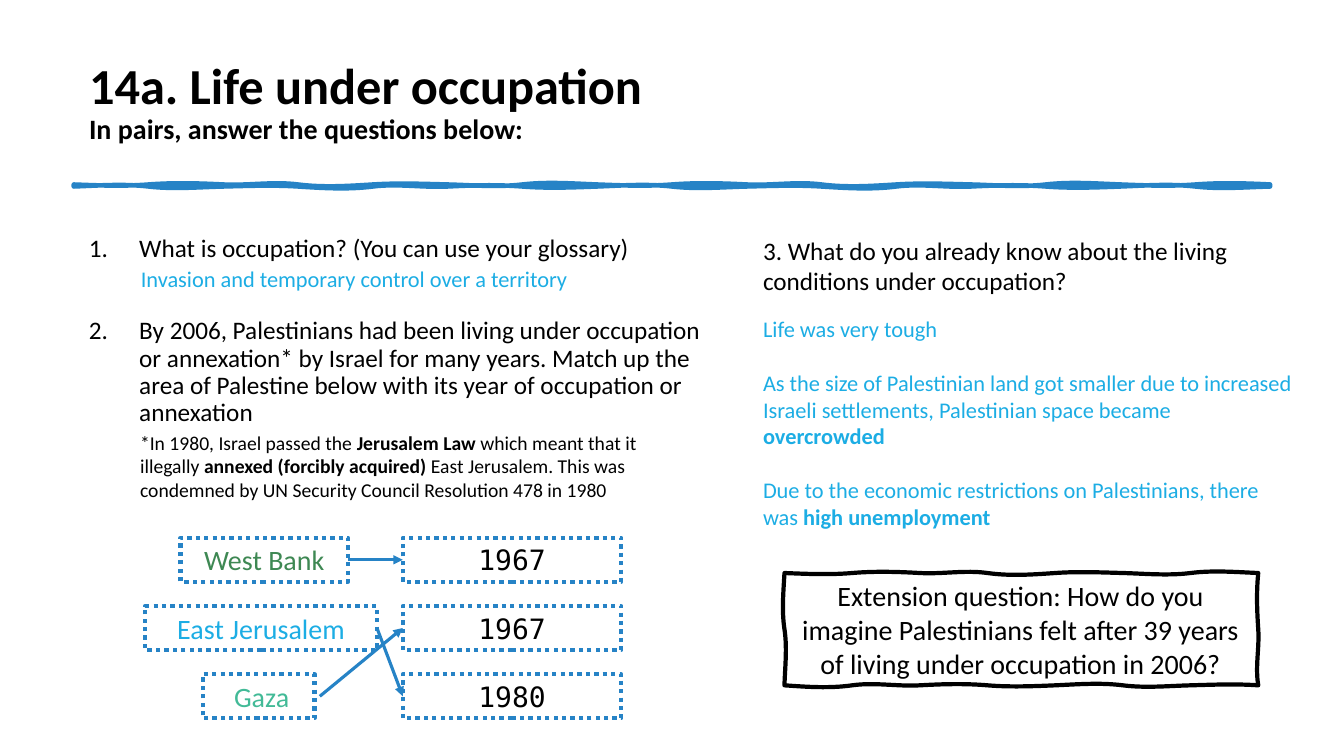
import itertools

import lxml.etree
import pptx
import pptx.dml.color
import pptx.enum.dml
import pptx.enum.shapes
import pptx.enum.text
import pptx.oxml.ns
import pptx.util

Cm, Pt = pptx.util.Cm, pptx.util.Pt
qn = pptx.oxml.ns.qn
ALIGN = pptx.enum.text.PP_ALIGN
ANCHOR = pptx.enum.text.MSO_ANCHOR
HUES = {"ink": "000000", "rule": "2683C6", "sky": "1CADE4",
        "leaf": "3E8853", "mint": "42BA97"}
SANS, MONO = "Calibri", "DejaVu Sans Mono"


def hue(name):
    return pptx.dml.color.RGBColor.from_string(HUES[name])


def add_run(para, text, size, tone="ink", face=SANS, bold=False):
    run = para.add_run()
    run.text = text
    for key, value in {"size": Pt(size), "name": face, "bold": bold}.items():
        setattr(run.font, key, value)
    run.font.color.rgb = hue(tone)


# Text: each paragraph is a list of plain strings and (bold,) tuples
def write(frame, paras, size, tone="ink", face=SANS, gap=0, **form):
    frame.word_wrap = True
    for i, parts in enumerate(paras):
        para = frame.paragraphs[0] if i == 0 else frame.add_paragraph()
        looks = {"alignment": ALIGN.LEFT, "space_before": Pt(gap if i else 0), **form}
        for key, value in looks.items():
            setattr(para, key, value)
        for part in parts:
            bold = isinstance(part, tuple)
            add_run(para, part[0] if bold else part, size, tone, face, bold)


def note(slide, box, paras, size, **form):
    frame = slide.shapes.add_textbox(*map(Cm, box)).text_frame
    write(frame, paras, size, **form)
    return frame


def style(shape, tone, width, fill=None):
    shape.shadow.inherit = False
    if fill:
        shape.fill.solid()
        shape.fill.fore_color.rgb = hue(fill)
    else:
        shape.fill.background()
    shape.line.color.rgb = hue(tone)
    shape.line.width = Pt(width)


# Hand-drawn outline: a rectangle whose long and short sides waver in curves
def sketch(slide, box, swing, spans, ends):
    left, top, wide, high = box
    bends = itertools.cycle((0.3, -0.6, 0.4, 1, -0.5, 0.2, -0.9))
    corners = [(left, top), (left + wide, top), (left + wide, top + high), (left, top + high)]
    dots = [corners[0]]
    for k, (x, y) in enumerate(corners):
        nx, ny = corners[(k + 1) % 4]
        count = ends if k % 2 else spans
        dx, dy = (nx - x) / count, (ny - y) / count
        reach = min(swing, high / 20) if k % 2 else swing
        bend = next(bends)
        for i in range(count):
            after = next(bends)
            for t, off in ((1 / 3, bend), (2 / 3, -after), (1, 0)):
                push = off * reach
                dots.append((x + dx * (i + t) + push * (k % 2),
                             y + dy * (i + t) + push * (1 - k % 2)))
            bend = after
    dots = [(Cm(x), Cm(y)) for x, y in dots]
    pen = slide.shapes.build_freeform(*dots[0])
    pen.add_line_segments(dots[1:], close=True)
    shape = pen.convert_to_shape()
    # Turn each three line steps into one curve
    steps = list(shape._element.iter(qn("a:lnTo")))
    for first, second, third in zip(steps[::3], steps[1::3], steps[2::3]):
        curve = lxml.etree.Element(qn("a:cubicBezTo"))
        first.addprevious(curve)
        for step in (first, second, third):
            curve.append(step[0])
            step.getparent().remove(step)
    return shape


# Heading with its wavy rule
def head(slide, box):
    left, top, wide, high = box
    title = slide.shapes.title
    for key, value in zip(("left", "top", "width", "height"), box):
        setattr(title, key, Cm(value))
    frame = title.text_frame
    frame.auto_size = pptx.enum.text.MSO_AUTO_SIZE.NONE
    frame.vertical_anchor = ANCHOR.MIDDLE
    write(frame, [[("14a. Life under occupation ",)]], 36, line_spacing=0.9)
    para = frame.paragraphs[0]
    para.add_line_break()
    lxml.etree.SubElement(para._p.find(qn("a:br")), qn("a:rPr"), sz="3600")
    add_run(para, "In pairs, answer the questions below:", 20, bold=True)
    rule = sketch(slide, (left - 0.13, top + high + 0.2, wide + 0.94, 0.05), 0.08, 16, 1)
    style(rule, "rule", 3.25, "rule")


# Numbered questions with answer and footnote
def quiz(slide, box):
    left, top, wide, high = box
    frame = note(slide, box, [
        ["What is occupation? (You can use your glossary)"],
        ["By 2006, Palestinians had been living under occupation or annexation* by Israel "
         "for many years. Match up the area of Palestine below with its year of "
         "occupation or annexation"]], 18, gap=39.5, line_spacing=0.9)
    for para in frame.paragraphs:
        props = para._p.get_or_add_pPr()
        props.set("marL", str(Cm(1.27)))
        props.set("indent", str(-Cm(1.27)))
        lxml.etree.SubElement(props, qn("a:buFont"), typeface="+mj-lt")
        lxml.etree.SubElement(props, qn("a:buAutoNum"), type="arabicPeriod")
    note(slide, (left + 1.31, top + 0.74, 14.6, 0.94),
         [["Invasion and temporary control over a territory"]], 16, tone="sky")
    note(slide, (left + 1.29, top + 4.92, 14.6, 2.06), [[
        "*In 1980, Israel passed the ", ("Jerusalem Law ",),
        "which meant that it illegally ", ("annexed (forcibly acquired) ",),
        "East Jerusalem. This was condemned by UN Security Council Resolution 478 in 1980"]], 14)


def card(slide, box, text, tone="ink", face=SANS, inset=0):
    kind = pptx.enum.shapes.MSO_SHAPE.RECTANGLE
    shape = slide.shapes.add_shape(kind, *map(Cm, box))
    style(shape, "rule", 3)
    shape.line.dash_style = pptx.enum.dml.MSO_LINE.ROUND_DOT
    frame = shape.text_frame
    frame.vertical_anchor = ANCHOR.MIDDLE
    frame.margin_left = Cm(0.25 + inset)
    write(frame, [[text]], 20, tone, face, alignment=ALIGN.CENTER)
    return shape


def arrow(slide, start, end, gap=0):
    y = start.top + start.height // 2
    x = start.left + start.width + Cm(gap)
    kind = pptx.enum.shapes.MSO_CONNECTOR.STRAIGHT
    link = slide.shapes.add_connector(kind, x, y, end.left, end.top + end.height // 2)
    if not gap:
        link.begin_connect(start, 3)
    link.end_connect(end, 1)
    link.line.color.rgb = hue("rule")
    link.line.width = Pt(2.25)
    props = link._element.spPr
    lxml.etree.SubElement(props.find(qn("a:ln")), qn("a:tailEnd"), type="triangle")
    lxml.etree.SubElement(props, qn("a:effectLst"))


# Places matched to years
def match(slide, box):
    left, top, wide, high = box
    tall = 1.11
    step = (high - tall) / 2
    rows = [("West Bank", "leaf", 0.89, 4.22, 0, "1967"),
            ("East Jerusalem", "sky", 0, 5.84, 0, "1967"),
            ("Gaza", "mint", 1.45, 2.82, 0.15, "1980")]
    spots, years = [], []
    for i, (place, tone, shift, span, inset, year) in enumerate(rows):
        y = top + i * step
        spots.append(card(slide, (left + shift, y, span, tall), place, tone, inset=inset))
        years.append(card(slide, (left + wide - 5.51, y, 5.51, tall), year, face=MONO))
    for start, end, gap in ((0, 0, 0), (1, 2, 0), (2, 1, 0.13)):
        arrow(slide, spots[start], years[end], gap)


# Third question, its answers and the extension
def talk(slide, box):
    left, top, wide, high = box
    note(slide, (left, top, 13.31, 5.21), [[
        "3. What do you already know about the living conditions under occupation?"]], 18)
    note(slide, (left, top + 2.01, wide, 6.4), [
        ["Life was very tough"],
        ["As the size of Palestinian land got smaller due to increased Israeli settlements, "
         "Palestinian space became ", ("overcrowded",)],
        ["Due to the economic restrictions on Palestinians, there was ",
         ("high unemployment",)]], 16, tone="sky", gap=19.3)
    panel = sketch(slide, (left + 0.79, top + high - 2.83, 11.94, 2.83), 0.08, 7, 2)
    style(panel, "ink", 3)
    panel.text_frame.vertical_anchor = ANCHOR.MIDDLE
    write(panel.text_frame, [[
        "Extension question: How do you imagine Palestinians felt after 39 years "
        "of living under occupation in 2006?"]], 20, alignment=ALIGN.CENTER)


def main():
    deck = pptx.Presentation()
    deck.slide_width, deck.slide_height = Cm(33.87), Cm(19.05)
    slide = deck.slides.add_slide(deck.slide_layouts[5])
    head(slide, (1.99, 0.76, 29.21, 3.69))
    quiz(slide, (1.99, 5.81, 16, 11.81))
    match(slide, (3.66, 13.55, 12, 4.55))
    talk(slide, (18.98, 5.8, 13.89, 11.47))
    deck.save("out.pptx")


if __name__ == "__main__":
    main()
